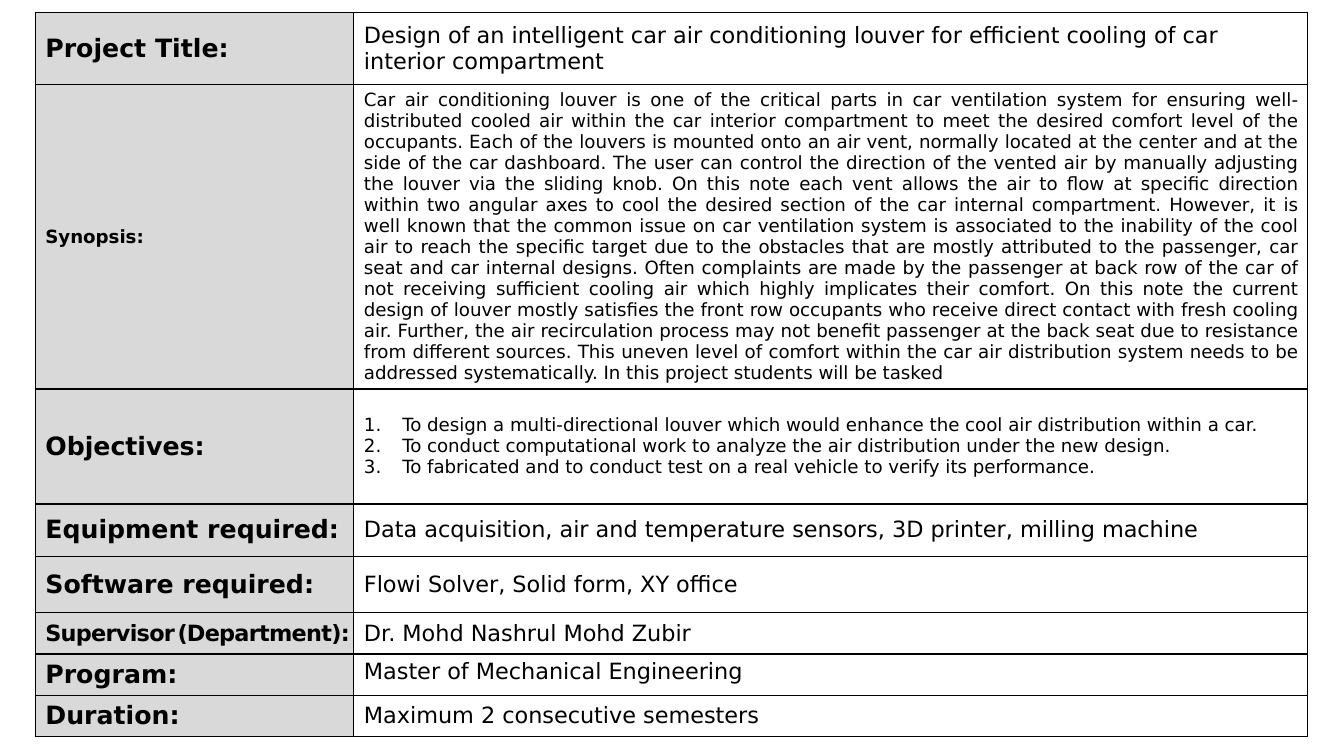
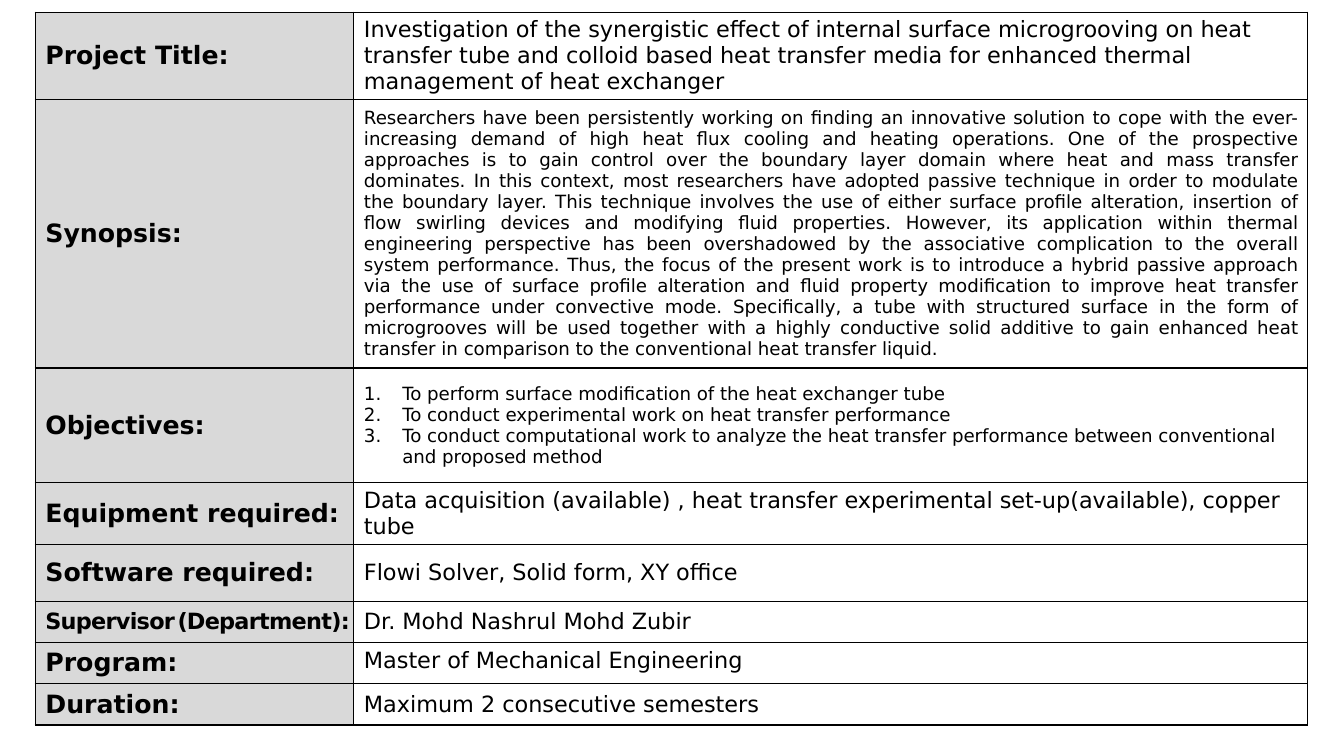
"""Build two project proposal slides, each a bordered table of labels and details."""
from lxml import etree
from pptx import Presentation
from pptx.dml.color import RGBColor
from pptx.enum.text import MSO_ANCHOR, PP_ALIGN
from pptx.oxml.ns import qn
from pptx.util import Inches, Pt

MIDDLE, TOP = MSO_ANCHOR.MIDDLE, MSO_ANCHOR.TOP
JUSTIFY = PP_ALIGN.JUSTIFY
BLACK = RGBColor(0x00, 0x00, 0x00)
GRAY = RGBColor(0xD9, 0xD9, 0xD9)
FONT = "DejaVu Sans"
LABEL_SIZE, VALUE_SIZE, BODY_SIZE, GAP_SIZE = 18, 16, 13, 5
LEFT, TOP_EDGE = 0.35, 0.12
COL_WIDTHS = (3.16, 9.46)
LABELS = ("Project Title:", "Synopsis:", "Objectives:", "Equipment required:",
          "Software required:", "Supervisor (Department):", "Program:", "Duration:")
SOFTWARE = "Flowi Solver, Solid form, XY office"
SUPERVISOR = "Dr. Mohd Nashrul Mohd Zubir"
PROGRAM = "Master of Mechanical Engineering"
DURATION = "Maximum 2 consecutive semesters"
SHARED_VALUES = (SOFTWARE, SUPERVISOR, PROGRAM, DURATION)
SHARED_HEIGHTS = (0.56, 0.41, 0.41, 0.41)

PROJECTS = (
    {
        "title": "Design of an intelligent car air conditioning louver for efficient "
                 "cooling of car interior compartment",
        "synopsis": (
            "Car air conditioning louver is one of the critical parts in car ventilation "
            "system for ensuring well-distributed cooled air within the car interior "
            "compartment to meet the desired comfort level of the occupants.",
            "Each of the louvers is mounted onto an air vent, normally located at the center "
            "and at the side of the car dashboard.",
            "The user can control the direction of the vented air by manually adjusting the "
            "louver via the sliding knob.",
            "On this note each vent allows the air to flow at specific direction within two "
            "angular axes to cool the desired section of the car internal compartment.",
            "However, it is well known that the common issue on car ventilation system is "
            "associated to the inability of the cool air to reach the specific target due to "
            "the obstacles that are mostly attributed to the passenger, car seat and car "
            "internal designs.",
            "Often complaints are made by the passenger at back row of the car of not "
            "receiving sufficient cooling air which highly implicates their comfort.",
            "On this note the current design of louver mostly satisfies the front row "
            "occupants who receive direct contact with fresh cooling air.",
            "Further, the air recirculation process may not benefit passenger at the back "
            "seat due to resistance from different sources.",
            "This uneven level of comfort within the car air distribution system needs to be "
            "addressed systematically.",
            "In this project students will be tasked",
        ),
        "objectives": (
            "To design a multi-directional louver which would enhance the cool air "
            "distribution within a car.",
            "To conduct computational work to analyze the air distribution under the new design.",
            "To fabricated and to conduct test on a real vehicle to verify its performance.",
        ),
        "equipment": "Data acquisition, air and temperature sensors, 3D printer, milling machine",
        "synopsis_label_size": BODY_SIZE,
        "heights": (0.72, 3.02, 1.14, 0.52),
    },
    {
        "title": "Investigation of the synergistic effect of internal surface microgrooving "
                 "on heat transfer tube and colloid based heat transfer media for enhanced "
                 "thermal management of heat exchanger",
        "synopsis": (
            "Researchers have been persistently working on finding an innovative solution to "
            "cope with the ever-increasing demand of high heat flux cooling and heating "
            "operations.",
            "One of the prospective approaches is to gain control over the boundary layer "
            "domain where heat and mass transfer dominates.",
            "In this context, most researchers have adopted passive technique in order to "
            "modulate the boundary layer.",
            "This technique involves the use of either surface profile alteration, insertion "
            "of flow swirling devices and modifying fluid properties.",
            "However, its application within thermal engineering perspective has been "
            "overshadowed by the associative complication to the overall system performance.",
            "Thus, the focus of the present work is to introduce a hybrid passive approach "
            "via the use of surface profile alteration and fluid property modification to "
            "improve heat transfer performance under convective mode.",
            "Specifically, a tube with structured surface in the form of microgrooves will be "
            "used together with a highly conductive solid additive to gain enhanced heat "
            "transfer in comparison to the conventional heat transfer liquid.",
        ),
        "objectives": (
            "To perform surface modification of the heat exchanger tube",
            "To conduct experimental work on heat transfer performance",
            "To conduct computational work to analyze the heat transfer performance between "
            "conventional and proposed method",
        ),
        "equipment": "Data acquisition (available) , heat transfer experimental "
                     "set-up(available), copper tube",
        "synopsis_label_size": LABEL_SIZE,
        "heights": (0.87, 2.66, 1.14, 0.61),
    },
)


def style_run(r, size, bold):
    r.font.name = FONT
    r.font.size = Pt(size)
    r.font.bold = bold
    r.font.color.rgb = BLACK


def set_borders(cell):
    tc_pr = cell._tc.get_or_add_tcPr()
    for side in ("a:lnL", "a:lnR", "a:lnT", "a:lnB"):
        ln = etree.SubElement(tc_pr, qn(side), w=str(Pt(1)))
        fill = etree.SubElement(ln, qn("a:solidFill"))
        etree.SubElement(fill, qn("a:srgbClr"), val=str(BLACK))


def fill_cell(cell, text, size, bold=False):
    cell.text_frame.text = text
    cell.vertical_anchor = MIDDLE
    for p in cell.text_frame.paragraphs:
        for r in p.runs:
            style_run(r, size, bold)
    set_borders(cell)
    if bold:
        cell.fill.solid()
        cell.fill.fore_color.rgb = GRAY
    else:
        cell.fill.background()


def number_paragraphs(cell):
    indent = Inches(0.38)
    for p in cell.text_frame.paragraphs:
        p_pr = p._p.get_or_add_pPr()
        p_pr.set("marL", str(indent))
        p_pr.set("indent", str(-indent))
        etree.SubElement(p_pr, qn("a:buAutoNum"), type="arabicPeriod")


def tighten_supervisor_label(cell, label):
    cell.margin_right = 0
    p = cell.text_frame.paragraphs[0]
    p.text = ""
    first, gap, last = label.partition(" ")
    for text, size in ((first, VALUE_SIZE), (gap, GAP_SIZE), (last, VALUE_SIZE)):
        r = p.add_run()
        r.text = text
        style_run(r, size, True)
        r.font._element.set("spc", "-50")


def add_project_slide(prs, project):
    s = prs.slides.add_slide(prs.slide_layouts[6])
    heights = project["heights"] + SHARED_HEIGHTS
    values = (project["title"], " ".join(project["synopsis"]),
              "\n".join(project["objectives"]), project["equipment"]) + SHARED_VALUES
    frame = s.shapes.add_table(len(LABELS), len(COL_WIDTHS), Inches(LEFT), Inches(TOP_EDGE),
                               Inches(sum(COL_WIDTHS)), Inches(sum(heights)))
    table = frame.table
    table.first_row = table.horz_banding = False
    for column, width in zip(table.columns, COL_WIDTHS):
        column.width = Inches(width)
    for i, (label, value, height) in enumerate(zip(LABELS, values, heights)):
        table.rows[i].height = Inches(height)
        is_body = label in ("Synopsis:", "Objectives:")
        label_size = project["synopsis_label_size"] if label == "Synopsis:" else LABEL_SIZE
        fill_cell(table.cell(i, 0), label, label_size, bold=True)
        fill_cell(table.cell(i, 1), value, BODY_SIZE if is_body else VALUE_SIZE)

    def cell_at(label, col):
        return table.cell(LABELS.index(label), col)

    cell_at("Synopsis:", 1).text_frame.paragraphs[0].alignment = JUSTIFY
    number_paragraphs(cell_at("Objectives:", 1))
    supervisor = "Supervisor (Department):"
    tighten_supervisor_label(cell_at(supervisor, 0), supervisor)
    cell_at("Program:", 1).vertical_anchor = TOP


def main():
    prs = Presentation()
    prs.slide_width, prs.slide_height = Inches(13.33), Inches(7.5)
    for project in PROJECTS:
        add_project_slide(prs, project)
    prs.save("out.pptx")


if __name__ == "__main__":
    main()
